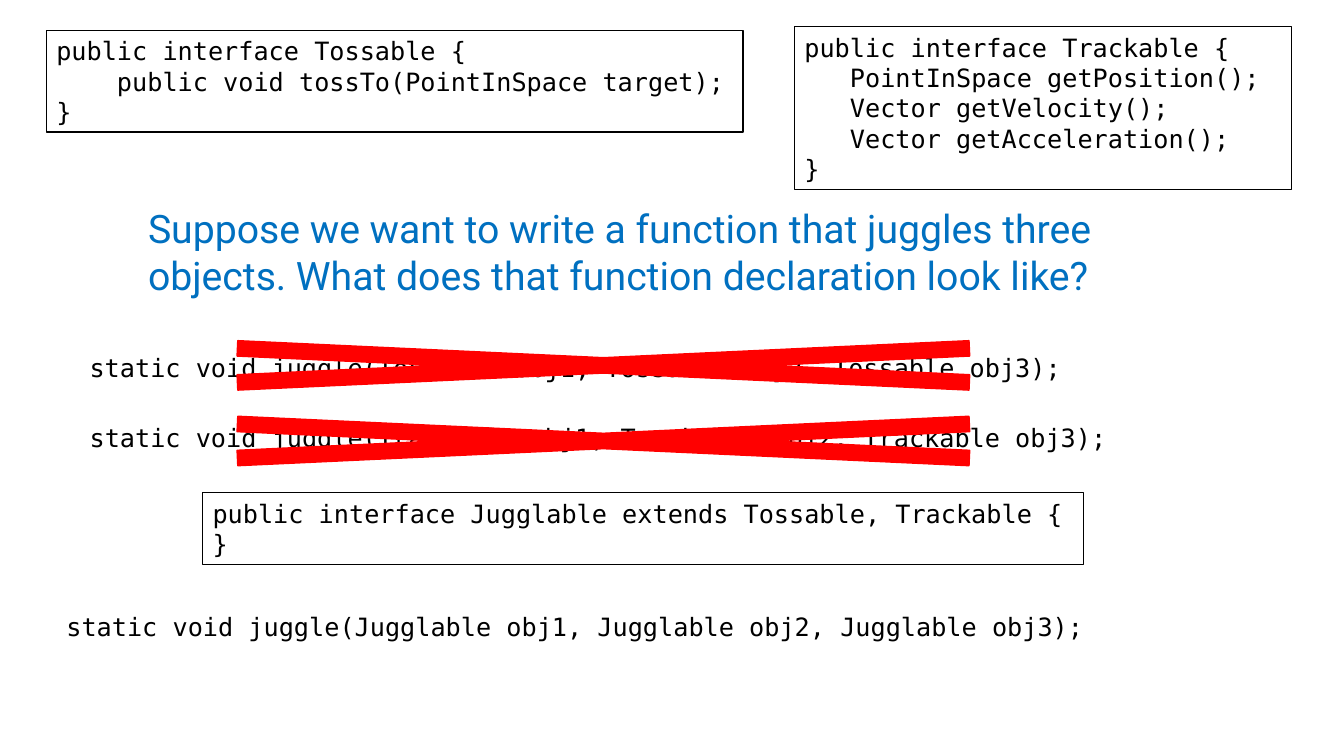
import pptx
import pptx.util
import pptx.dml.color
import pptx.enum.shapes
import pptx.enum.text
from dataclasses import dataclass
from pptx.util import Inches

RGB = pptx.dml.color.RGBColor
SHAPE = pptx.enum.shapes.MSO_SHAPE


@dataclass(frozen=True)
class Theme:
    ink: RGB = RGB(0x00, 0x00, 0x00)
    question: RGB = RGB(0x00, 0x70, 0xC0)
    cross: RGB = RGB(0xFF, 0x00, 0x00)
    code_font: str = "DejaVu Sans Mono"
    text_font: str = "Roboto"
    code_size: int = 18
    question_size: int = 28


theme = Theme()
CODE = {"name": theme.code_font, "size": pptx.util.Pt(theme.code_size)}
QUESTION = {"name": theme.text_font, "size": pptx.util.Pt(theme.question_size)}

prs = pptx.Presentation()
prs.slide_width, prs.slide_height = Inches(13.33), Inches(7.5)
s = prs.slides.add_slide(prs.slide_layouts[6])


def write(sp, lines, fmt, color, wrap=False):
    tf = sp.text_frame
    tf.word_wrap = wrap
    tf.auto_size = pptx.enum.text.MSO_AUTO_SIZE.SHAPE_TO_FIT_TEXT
    for i, line in enumerate(lines):
        p = tf.paragraphs[0] if i == 0 else tf.add_paragraph()
        p.alignment = pptx.enum.text.PP_ALIGN.LEFT
        r = p.add_run()
        r.text = line
        for key, value in fmt.items():
            setattr(r.font, key, value)
        r.font.color.rgb = color


# Interface definitions in outlined boxes
interfaces = [
    ((0.46, 0.3, 6.91, 1.01), [
        "public interface Tossable {",
        "    public void tossTo(PointInSpace target);",
        "}",
    ]),
    ((7.88, 0.26, 4.93, 1.62), [
        "public interface Trackable {",
        "   PointInSpace getPosition();",
        "   Vector getVelocity();",
        "   Vector getAcceleration();",
        "}",
    ]),
    ((2.01, 4.89, 8.74, 0.71), [
        "public interface Jugglable extends Tossable, Trackable {",
        "}",
    ]),
]
for box, lines in interfaces:
    sp = s.shapes.add_shape(SHAPE.RECTANGLE, *map(Inches, box))
    sp.shadow.inherit = False
    sp.fill.background()
    sp.line.color.rgb = theme.ink
    sp.line.width = pptx.util.Pt(0.75)
    write(sp, lines, CODE, theme.ink)

# Question
sp = s.shapes.add_textbox(Inches(1.37), Inches(1.98), Inches(10.03), Inches(1.04))
write(sp, ["Suppose we want to write a function that juggles three objects. "
           "What does that function declaration look like?"],
      QUESTION, theme.question, wrap=True)

# Candidate declarations, one per parameter type
declarations = [
    ("Tossable", 0.79, 3.45, 9.96),
    ("Trackable", 0.79, 4.14, 10.42),
    ("Jugglable", 0.56, 6.02, 10.42),
]
for kind, left, top, width in declarations:
    sp = s.shapes.add_textbox(Inches(left), Inches(top), Inches(width), Inches(0.4))
    params = ", ".join(f"{kind} obj{n}" for n in (1, 2, 3))
    write(sp, [f"static void juggle({params});"], CODE, theme.ink)

# Crosses over the two rejected declarations
for top in (4.05, 3.3):
    sp = s.shapes.add_shape(SHAPE.MATH_MULTIPLY, Inches(-1), Inches(top),
                            Inches(13.97), Inches(0.65))
    sp.shadow.inherit = False
    sp.fill.solid()
    sp.fill.fore_color.rgb = theme.cross
    sp.line.color.rgb = theme.cross
    sp.line.width = pptx.util.Pt(1)

prs.save("out.pptx")
